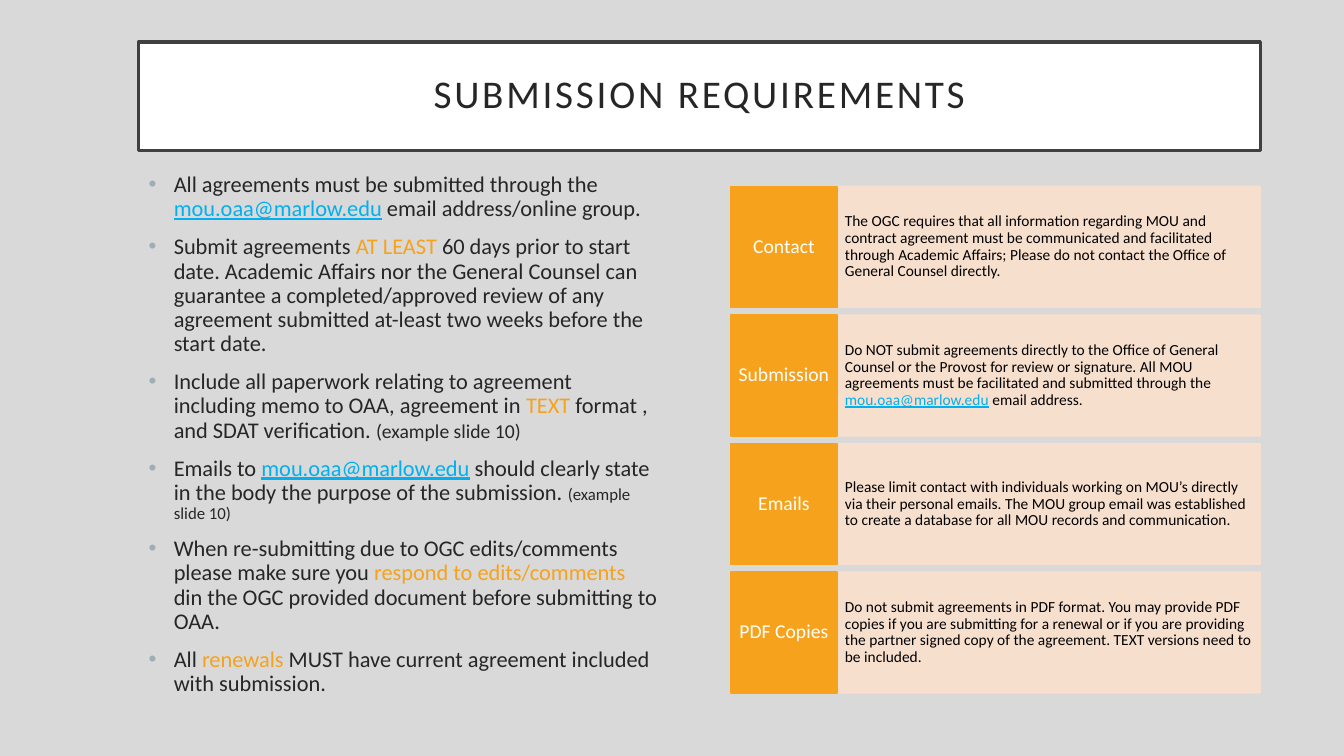
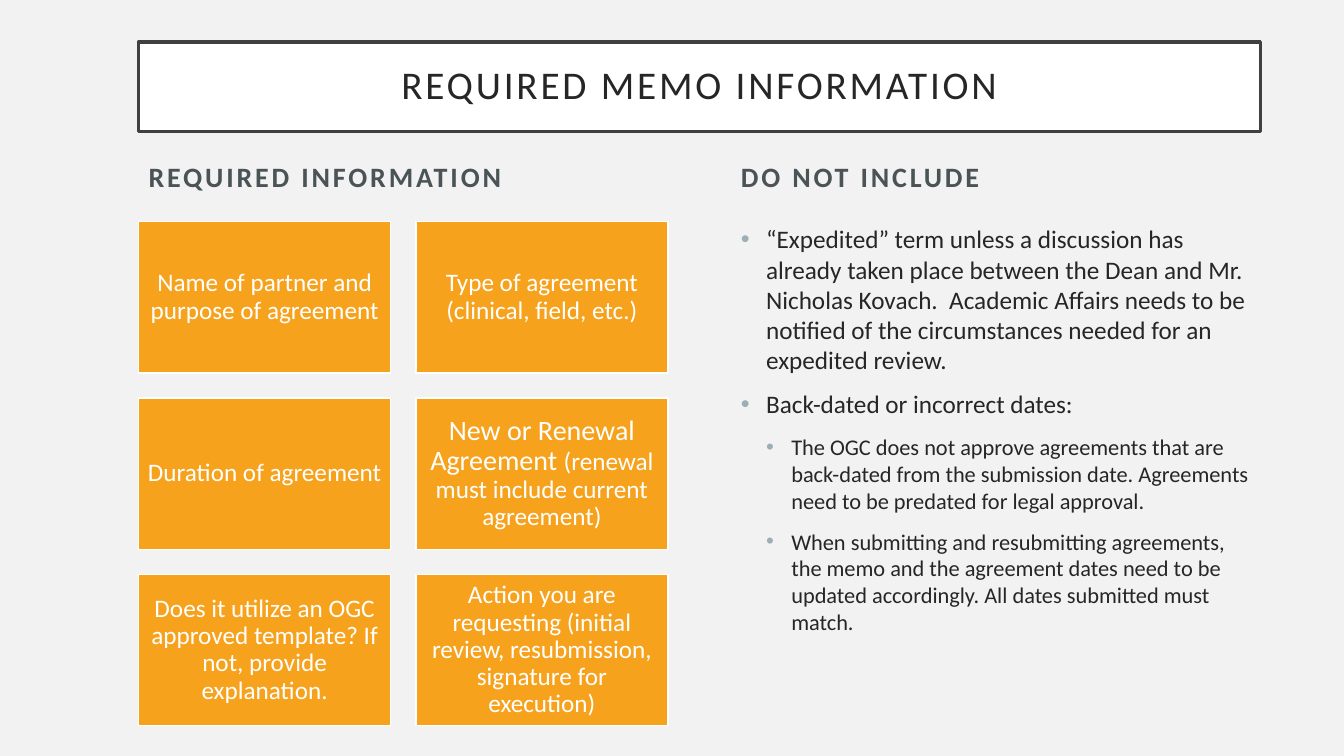
from collections import namedtuple

from pptx import Presentation
from pptx.dml.color import RGBColor
from pptx.enum.shapes import MSO_SHAPE as Shape
from pptx.enum.text import MSO_ANCHOR as Anchor, PP_ALIGN as Align
from pptx.oxml.ns import qn
from pptx.util import Inches, Pt
from lxml.etree import SubElement

FONT = "Calibri"
INK, BLACK, WHITE = "262626", "000000", "FFFFFF"
ORANGE, PEACH, LINK = "F6A21D", "FBE0CD", "00B0F0"
FRAME, SUBHEAD, BULLET = "404040", "4A5356", "9BAFB5"

# Grid of square cells, eight to the inch
CELL = 0.125
LEFT, RIGHT, COLUMN = 11, 58, 42
FULL = RIGHT + COLUMN - LEFT

Run = namedtuple("Run", "text color size underline", defaults=(None, None, False))
EMAIL = Run("mou.oaa@marlow.edu", LINK, underline=True)


def accent(text):
    return Run(text, ORANGE)


SUBMISSION_RULES = [
    ["All agreements must be submitted through the ", EMAIL,
     " email address/online group."],
    ["Submit agreements ", accent("AT LEAST "),
     "60 days prior to start date. Academic Affairs nor the General Counsel can "
     "guarantee a completed/approved review of any agreement submitted at-least "
     "two weeks before the start date."],
    ["Include all paperwork relating to agreement including memo to OAA, agreement in ",
     accent("TEXT"), " format , and SDAT verification. ",
     Run("(example slide 10)", size=14)],
    ["Emails to ", EMAIL,
     " should clearly state in the body the purpose of the submission. ",
     Run("(example slide 10)", size=12)],
    ["When re-submitting due to OGC edits/comments please make sure you ",
     accent("respond to edits/comments"),
     " din the OGC provided document before submitting to OAA."],
    ["All ", accent("renewals"),
     " MUST have current agreement included with submission."],
]

CONTACT_RULES = [
    ("Contact",
     ["The OGC requires that all information regarding MOU and contract agreement "
      "must be communicated and facilitated through Academic Affairs; Please do not "
      "contact the Office of General Counsel directly."]),
    ("Submission",
     ["Do NOT submit agreements directly to the Office of General Counsel or the "
      "Provost for review or signature. All MOU agreements must be facilitated and "
      "submitted through the ", EMAIL, " email address."]),
    ("Emails",
     ["Please limit contact with individuals working on MOU’s directly via their "
      "personal emails. The MOU group email was established to create a database for "
      "all MOU records and communication."]),
    ("PDF Copies",
     ["Do not submit agreements in PDF format. You may provide PDF copies if you are "
      "submitting for a renewal or if you are providing the partner signed copy of "
      "the agreement. TEXT versions need to be included."]),
]

MEMO_ITEMS = [
    ["Name of partner and purpose of agreement"],
    ["Type of agreement (clinical, field, etc.)"],
    ["Duration of agreement"],
    [Run("New or Renewal Agreement ", size=20),
     "(renewal must include current agreement)"],
    ["Does it utilize an OGC approved template? If not, provide explanation."],
    ["Action you are requesting (initial review, resubmission, signature for execution)"],
]

EXCLUSIONS = [
    ["“Expedited” term unless a discussion has already taken place between the Dean "
     "and Mr. Nicholas Kovach.  Academic Affairs needs to be notified of the "
     "circumstances needed for an expedited review."],
    ["Back-dated or incorrect dates:"],
]

DATE_RULES = [
    ["The OGC does not approve agreements that are back-dated from the submission "
     "date. Agreements need to be predated for legal approval."],
    ["When submitting and resubmitting agreements, the memo and the agreement dates "
     "need to be updated accordingly. All dates submitted must match."],
]


def rgb(value):
    return RGBColor.from_string(value)


def grid(*cells):
    return [Inches(count * CELL) for count in cells]


def add_runs(paragraph, runs, size, color, bold=False, spacing=0):
    """Add runs in order; plain strings take the paragraph's size and colour."""
    for item in runs:
        part = Run(item) if isinstance(item, str) else item
        run = paragraph.add_run()
        run.text = part.text
        font = run.font
        font.name, font.size, font.bold = FONT, Pt(part.size or size), bold
        font.color.rgb = rgb(part.color or color)
        if part.underline:
            font.underline = True
        if spacing:
            run._r.get_or_add_rPr().set("spc", str(spacing * 100))


def add_bullet(paragraph, level):
    paragraph.level = level
    props = paragraph._p.get_or_add_pPr()
    props.set("marL", str(Inches(0.25 * (level + 1))))
    props.set("indent", str(-Inches(0.25)))
    SubElement(SubElement(props, qn("a:buClr")), qn("a:srgbClr"), val=BULLET)
    SubElement(props, qn("a:buFont"), typeface="Arial")
    SubElement(props, qn("a:buChar"), char="•")


def text_frame(slide, box, anchor=Anchor.TOP):
    frame = slide.shapes.add_textbox(*grid(*box)).text_frame
    frame.word_wrap = True
    frame.vertical_anchor = anchor
    return frame


def bullet_list(slide, box, groups, line_spacing=1.0):
    """Fill a box from groups of (level, size, items)."""
    frame = text_frame(slide, box)
    entries = [(level, size, runs) for level, size, items in groups for runs in items]
    for index, (level, size, runs) in enumerate(entries):
        paragraph = frame.add_paragraph() if index else frame.paragraphs[0]
        paragraph.line_spacing = line_spacing
        paragraph.space_before = Pt(10)
        add_bullet(paragraph, level)
        add_runs(paragraph, runs, size, INK)


def panel(slide, box, runs, size, color, fill, line, insets,
          align=Align.CENTER, line_width=1, spacing=0, opacity=None):
    """Draw a filled rectangle with middle-anchored text."""
    rectangle = slide.shapes.add_shape(Shape.RECTANGLE, *grid(*box))
    rectangle.shadow.inherit = False
    rectangle.fill.solid()
    rectangle.fill.fore_color.rgb = rgb(fill)
    rectangle.line.color.rgb = rgb(line)
    rectangle.line.width = Pt(line_width)
    if opacity:
        for paint in rectangle._element.spPr.iter(qn("a:srgbClr")):
            SubElement(paint, qn("a:alpha"), val=str(opacity * 1000))
    frame = rectangle.text_frame
    frame.word_wrap = True
    frame.vertical_anchor = Anchor.MIDDLE
    side, end = insets
    frame.margin_left = frame.margin_right = Inches(side)
    frame.margin_top = frame.margin_bottom = Inches(end)
    paragraph = frame.paragraphs[0]
    paragraph.alignment = align
    paragraph.line_spacing = 0.9
    add_runs(paragraph, runs, size, color, spacing=spacing)


def titled_slide(deck, title, background, title_rows):
    slide = deck.slides.add_slide(deck.slide_layouts[6])
    slide.background.fill.solid()
    slide.background.fill.fore_color.rgb = rgb(background)
    panel(slide, (LEFT, 3.33, FULL, title_rows), [title], 28, INK, WHITE, FRAME,
          (0.2, 0.2), line_width=2.5, spacing=2)
    return slide


def subheading(slide, column, text):
    frame = text_frame(slide, (column, 10.2, COLUMN, 5.55), Anchor.BOTTOM)
    add_runs(frame.paragraphs[0], [text], 20, SUBHEAD, bold=True, spacing=2)


def rule_rows(slide, rules):
    """Stack rows of an orange label and its pale detail."""
    label_columns, height, pitch = COLUMN / 5, 9.6, 10.2
    for index, (label, detail) in enumerate(rules):
        top = 14.8 + index * pitch
        panel(slide, (RIGHT + label_columns, top, COLUMN - label_columns, height),
              detail, 11, BLACK, PEACH, PEACH, (0.08, 0.31), Align.LEFT, opacity=90)
        panel(slide, (RIGHT, top, label_columns, height),
              [label], 14, WHITE, ORANGE, ORANGE, (0.06, 0.12))


def tiles(slide, items):
    width, height, gap = 20, 12, 2
    for index, runs in enumerate(items):
        row, column = divmod(index, 2)
        box = (LEFT + column * (width + gap), 17.6 + row * (height + gap), width, height)
        panel(slide, box, runs, 18, WHITE, ORANGE, WHITE, (0.07, 0.07))


def main():
    deck = Presentation()
    deck.slide_width, deck.slide_height = Inches(13.33), Inches(7.5)

    submission = titled_slide(deck, "SUBMISSION REQUIREMENTS", "D9D9D9", 8.6)
    bullet_list(submission, (LEFT, 13.35, COLUMN, 45.2),
                [(0, 16, SUBMISSION_RULES)], line_spacing=0.9)
    rule_rows(submission, CONTACT_RULES)

    memo = titled_slide(deck, "REQUIRED MEMO INFORMATION", "F2F2F2", 7.1)
    subheading(memo, LEFT, "REQUIRED INFORMATION")
    tiles(memo, MEMO_ITEMS)
    subheading(memo, RIGHT, "DO NOT INCLUDE")
    bullet_list(memo, (RIGHT, 17.35, COLUMN, 40.5),
                [(0, 18, EXCLUSIONS), (1, 16, DATE_RULES)])

    deck.save("out.pptx")


if __name__ == "__main__":
    main()
